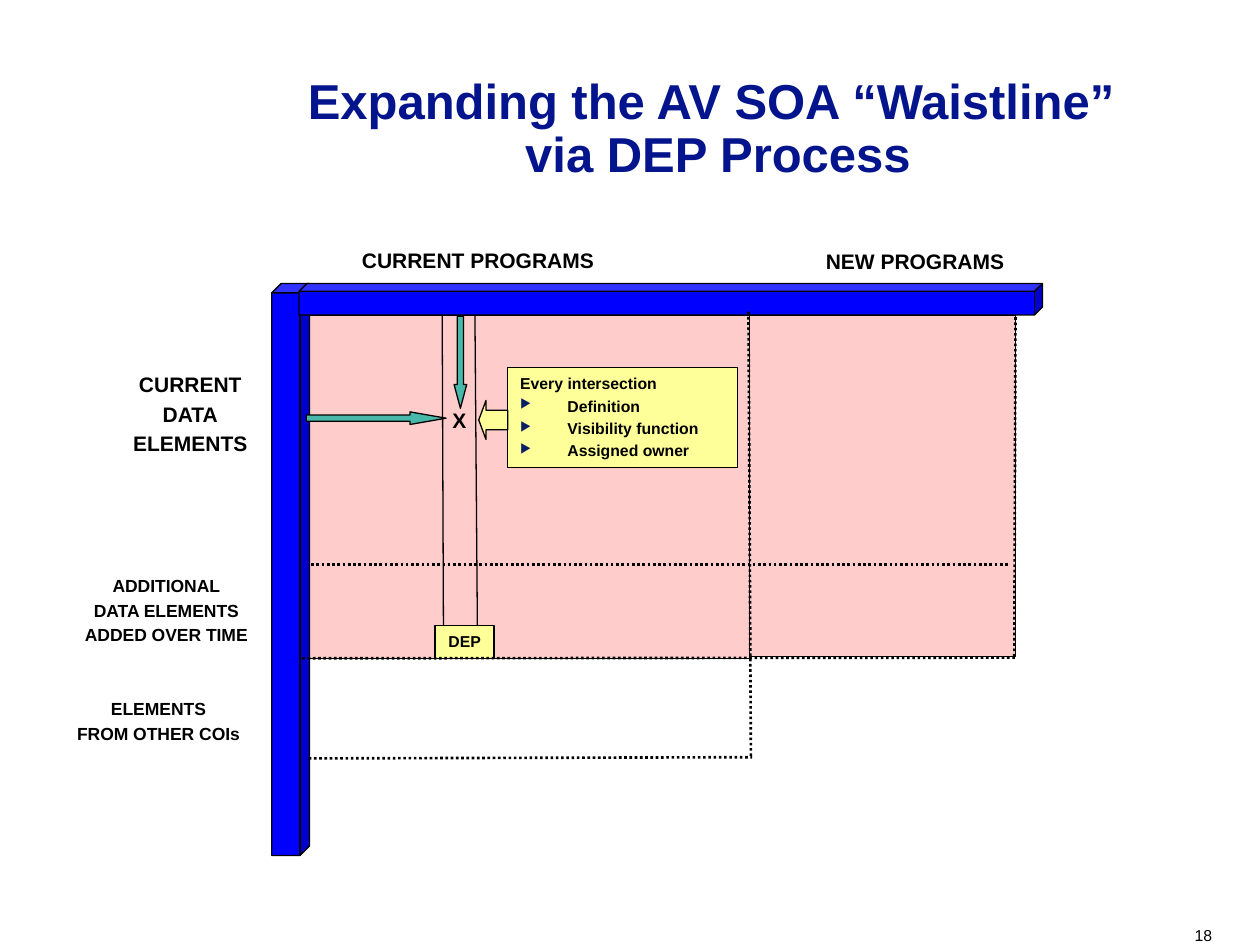
"""Build the slide on expanding the AV SOA waistline via the DEP process."""
from lxml import etree
from pptx import Presentation
from pptx.dml.color import RGBColor
from pptx.enum.dml import MSO_LINE
from pptx.enum.shapes import MSO_CONNECTOR, MSO_SHAPE
from pptx.enum.text import MSO_ANCHOR, PP_ALIGN
from pptx.oxml.ns import qn
from pptx.util import Pt

RECTANGLE, CUBE = MSO_SHAPE.RECTANGLE, MSO_SHAPE.CUBE
RIGHT_ARROW, DOWN_ARROW, LEFT_ARROW = MSO_SHAPE.RIGHT_ARROW, MSO_SHAPE.DOWN_ARROW, MSO_SHAPE.LEFT_ARROW
STRAIGHT = MSO_CONNECTOR.STRAIGHT
SOLID, DOTTED = MSO_LINE.SOLID, MSO_LINE.ROUND_DOT
TOP, BOTTOM = MSO_ANCHOR.TOP, MSO_ANCHOR.BOTTOM
LEFT, CENTER, RIGHT = PP_ALIGN.LEFT, PP_ALIGN.CENTER, PP_ALIGN.RIGHT

COLORS = {
    "black": "000000", "title": "04148C", "bar": "0000FF", "area": "FFCCCC",
    "arrow": "48B8AB", "note": "FFFF99", "bullet": "0B1F65",
}
BULLET_INDENT = 27

presentation = Presentation()
presentation.slide_width, presentation.slide_height = Pt(720), Pt(540)
slide = presentation.slides.add_slide(presentation.slide_layouts[6])


def color(name):
    return RGBColor.from_string(COLORS[name])


def write_text(shape, lines, size=12, bold=True, ink="black", align=CENTER, anchor=TOP,
               margins=(7.2, 3.6), wrap=True, line_spacing=None, bullets_from=None):
    frame = shape.text_frame
    frame.word_wrap = wrap
    frame.vertical_anchor = anchor
    frame.margin_left = frame.margin_right = Pt(margins[0])
    frame.margin_top = frame.margin_bottom = Pt(margins[1])
    for index, line in enumerate(lines):
        paragraph = frame.add_paragraph() if index else frame.paragraphs[0]
        paragraph.text = line
        paragraph.alignment = align
        if bullets_from is not None and index >= bullets_from:
            properties = paragraph._p.get_or_add_pPr()
            properties.set("marL", str(Pt(BULLET_INDENT)))
            properties.set("indent", str(-Pt(BULLET_INDENT)))
            bullet_color = etree.SubElement(properties, qn("a:buClr"))
            etree.SubElement(bullet_color, qn("a:srgbClr"), val=COLORS["bullet"])
            etree.SubElement(properties, qn("a:buSzPct"), val="80000")
            etree.SubElement(properties, qn("a:buChar"), char="▶")
        if index:
            paragraph.space_before = Pt(round(size * 0.21, 1))
        if line_spacing:
            paragraph.line_spacing = line_spacing
        for run in paragraph.runs:
            run.font.name, run.font.size, run.font.bold = "Arial", Pt(size), bold
            run.font.color.rgb = color(ink)


for kind, fill, box, adjustments, lines, text_format in [
    (RECTANGLE, "area", (428.4, 180, 151.9, 195.1), (), [], {}),
    (RECTANGLE, "area", (176.4, 180, 252, 196.2), (), [], {}),
    (CUBE, "bar", (155.3, 162, 21.6, 326.9), (0.25,), [], {}),
    (CUBE, "bar", (170.9, 162, 424.8, 18), (0.25,), [], {}),
    (RIGHT_ARROW, "arrow", (175, 235.4, 79.9, 7.2), (0.5, 2.87), [], {}),
    (DOWN_ARROW, "arrow", (259.5, 180.7, 7.2, 52.6), (0.5, 1.88), [], {}),
    (RECTANGLE, "note", (248.6, 357.5, 33.8, 18.7), (), ["DEP"], dict(size=9, wrap=False)),
    (RECTANGLE, "note", (290.2, 210.2, 131.2, 57.1), (),
     ["Every intersection", "Definition", "Visibility function", "Assigned owner"],
     dict(size=9, align=LEFT, bullets_from=1)),
    (LEFT_ARROW, "note", (273.6, 228.8, 16.6, 22.3), (0.5, 0.25), [], {}),
]:
    shape = slide.shapes.add_shape(kind, *map(Pt, box))
    shape.shadow.inherit = False
    shape.fill.solid()
    shape.fill.fore_color.rgb = color(fill)
    shape.line.color.rgb = color("black")
    shape.line.width = Pt(0.75)
    for index, value in enumerate(adjustments):
        shape.adjustments[index] = value
    if lines:
        write_text(shape, lines, **text_format)

for ends, width, dash in [
    ((252.7, 179.3, 253.4, 357.1), 0.75, SOLID),
    ((271.4, 179.3, 272.8, 357.1), 0.75, SOLID),
    ((177.8, 322.6, 577.4, 322.6), 1.5, DOTTED),
    ((172.8, 376.2, 581, 375.8), 1.5, DOTTED),
    ((579.6, 375.1, 580.3, 180.7), 1.5, DOTTED),
    ((429.1, 432, 427.7, 177.1), 1.5, DOTTED),
    ((176.4, 433.4, 429.8, 432.7), 1.5, DOTTED),
]:
    connector = slide.shapes.add_connector(STRAIGHT, *map(Pt, ends))
    connector.line.color.rgb = color("black")
    connector.line.width = Pt(width)
    connector.line.dash_style = dash
    etree.SubElement(connector._element.spPr, qn("a:effectLst"))

for box, lines, text_format in [
    ((133.7, 53.5, 553, 51.1), ["Expanding the AV SOA “Waistline” \vvia DEP Process"],
     dict(size=28, ink="title", anchor=BOTTOM, margins=(0, 0), line_spacing=0.9)),
    ((187.9, 138, 170.6, 21.6), ["CURRENT PROGRAMS"], {}),
    ((437.6, 138.7, 170.6, 21.6), ["NEW PROGRAMS"], {}),
    ((68.8, 208.8, 79.9, 56.2), ["CURRENT", "DATA", "ELEMENTS"], dict(wrap=False)),
    ((251.3, 229.6, 22.3, 21.6), ["X"], dict(wrap=False)),
    ((36, 325, 118.1, 48.2), ["ADDITIONAL", "DATA ELEMENTS", "ADDED OVER TIME"], dict(size=10)),
    ((31.5, 395.6, 118.1, 33.8), ["ELEMENTS", "FROM OTHER COIs"], dict(size=10)),
    ((681.8, 528.8, 10.8, 10.8), ["18"],
     dict(size=9, bold=False, align=RIGHT, margins=(0, 0), wrap=False)),
]:
    write_text(slide.shapes.add_textbox(*map(Pt, box)), lines, **text_format)

presentation.save("out.pptx")
